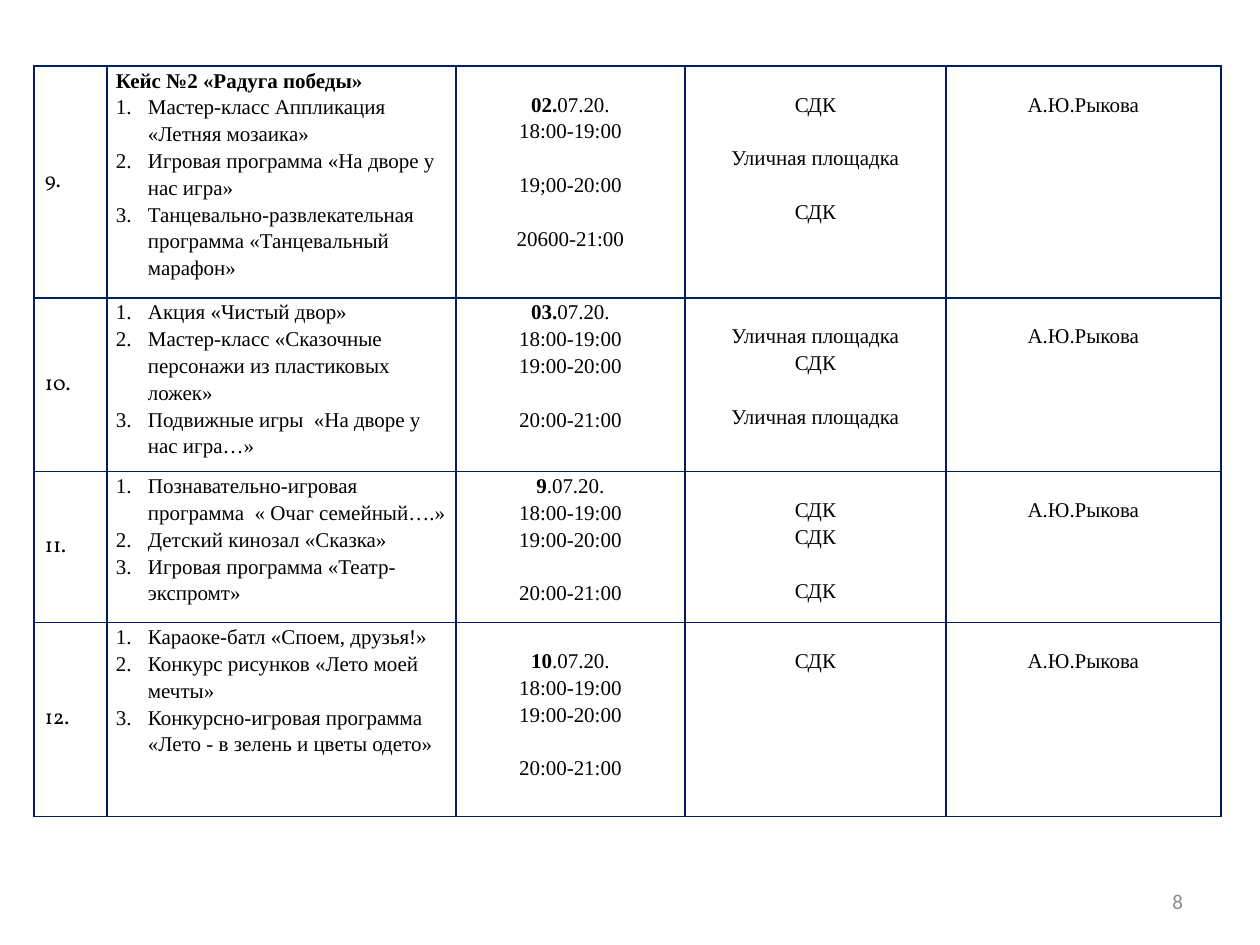
from lxml import etree
from pptx import Presentation, util as u
from pptx.dml.color import RGBColor
from pptx.enum import text
from pptx.oxml import ns

BLACK = RGBColor(0, 0, 0)
WHITE = RGBColor(0xFF, 0xFF, 0xFF)
GRAY = RGBColor(0x8C, 0x8C, 0x8C)
NAVY = RGBColor(0, 0x20, 0x60)
LEFT, CENTER, RIGHT = text.PP_ALIGN.LEFT, text.PP_ALIGN.CENTER, text.PP_ALIGN.RIGHT
MIDDLE, TOP = text.MSO_ANCHOR.MIDDLE, text.MSO_ANCHOR.TOP
GAP = None

COLUMN_WIDTHS = [73, 349, 229, 261, 275]
ROW_HEIGHTS = [227, 166, 151, 194]
LEADER = [GAP, "А.Ю.Рыкова"]
SCHEDULE = [
    ("9.", "Кейс №2 «Радуга победы»",
     ["Мастер-класс Аппликация «Летняя мозаика»",
      "Игровая программа «На дворе у нас игра»",
      "Танцевально-развлекательная программа «Танцевальный марафон»"],
     [GAP, ("02.", "07.20."), "18:00-19:00", GAP, "19;00-20:00", GAP, "20600-21:00"],
     [GAP, "СДК", GAP, "Уличная площадка", GAP, "СДК"]),
    ("10.", "",
     ["Акция «Чистый двор»",
      "Мастер-класс «Сказочные персонажи из пластиковых ложек»",
      "Подвижные игры  «На дворе у нас игра…»"],
     [("03.", "07.20."), "18:00-19:00", "19:00-20:00", GAP, "20:00-21:00"],
     [GAP, "Уличная площадка", "СДК", GAP, "Уличная площадка"]),
    ("11.", "",
     ["Познавательно-игровая программа  « Очаг семейный….»",
      "Детский кинозал «Сказка»",
      "Игровая программа «Театр-экспромт»"],
     [("9", ".07.20."), "18:00-19:00", "19:00-20:00", GAP, "20:00-21:00"],
     [GAP, "СДК", "СДК", GAP, "СДК"]),
    ("12.", "",
     ["Караоке-батл «Споем, друзья!»",
      "Конкурс рисунков «Лето моей мечты»",
      "Конкурсно-игровая программа «Лето - в зелень и цветы одето»"],
     [GAP, ("10", ".07.20."), "18:00-19:00", "19:00-20:00", GAP, "20:00-21:00"],
     [GAP, "СДК"]),
]


def px(length):
    return u.Emu(round(length * 914400 / 126))


def apply(target, **values):
    for name, value in values.items():
        setattr(target, name, value)


class SlideBuilder:
    size = u.Pt(12)
    body_font = "Times New Roman"
    number_font = "Vollkorn"
    page_font = "Calibri"
    line_spacing = 1.15
    blank_line = u.Pt(15.3)
    first_blank = 24
    indent = 32

    def __init__(self, deck):
        self.slide = deck.slides.add_slide(deck.slide_layouts[6])

    def run(self, paragraph, wording, font, color=BLACK, bold=False):
        run = paragraph.add_run()
        run.text = wording
        apply(run.font, name=font, size=self.size, bold=bold)
        run.font.color.rgb = color

    def number_list_item(self, paragraph):
        properties = paragraph._p.get_or_add_pPr()
        properties.set("marL", str(px(self.indent)))
        properties.set("indent", str(-px(self.indent)))
        etree.SubElement(properties, ns.qn("a:buFont"), typeface="+mj-lt")
        etree.SubElement(properties, ns.qn("a:buAutoNum"), type="arabicPeriod")

    def borders(self, cell):
        properties = cell._tc.get_or_add_tcPr()
        for side in ("lnL", "lnR", "lnT", "lnB"):
            line = etree.SubElement(properties, ns.qn(f"a:{side}"), w=str(u.Pt(1)))
            fill = etree.SubElement(line, ns.qn("a:solidFill"))
            etree.SubElement(fill, ns.qn("a:srgbClr"), val=str(NAVY))

    def cell(self, cell, side=9, top=0, bottom=0, anchor=TOP):
        self.borders(cell)
        cell.fill.solid()
        cell.fill.fore_color.rgb = WHITE
        apply(cell, margin_left=px(side), margin_right=px(side), margin_top=px(top),
              margin_bottom=px(bottom), vertical_anchor=anchor)
        return cell.text_frame

    def number_cell(self, cell, number):
        frame = self.cell(cell, side=11, top=6, bottom=6, anchor=MIDDLE)
        self.run(frame.paragraphs[0], number, self.number_font)

    def events_cell(self, cell, heading, events):
        frame = self.cell(cell)
        lines = [heading] * bool(heading) + events
        for index, line in enumerate(lines):
            paragraph = frame.add_paragraph() if index else frame.paragraphs[0]
            if line != heading:
                self.number_list_item(paragraph)
            apply(paragraph, alignment=LEFT, line_spacing=self.line_spacing)
            self.run(paragraph, line, self.body_font, bold=line == heading)

    def centred_cell(self, cell, lines):
        starts_blank = lines[0] is GAP
        frame = self.cell(cell, top=self.first_blank if starts_blank else 0)
        lines = lines[1:] if starts_blank else lines
        for index, line in enumerate(lines):
            if line is GAP:
                continue
            paragraph = frame.add_paragraph() if index else frame.paragraphs[0]
            apply(paragraph, alignment=CENTER, line_spacing=self.line_spacing)
            if index and lines[index - 1] is GAP:
                paragraph.space_before = self.blank_line
            bold, plain = line if isinstance(line, tuple) else ("", line)
            if bold:
                self.run(paragraph, bold, self.body_font, bold=True)
            self.run(paragraph, plain, self.body_font)

    def schedule(self, left, top):
        table = self.slide.shapes.add_table(
            len(ROW_HEIGHTS), len(COLUMN_WIDTHS), px(left), px(top),
            px(sum(COLUMN_WIDTHS)), px(sum(ROW_HEIGHTS))).table
        apply(table, first_row=False, horz_banding=False)
        for column, width in zip(table.columns, COLUMN_WIDTHS):
            column.width = px(width)
        for row, height, entry in zip(table.rows, ROW_HEIGHTS, SCHEDULE):
            row.height = px(height)
            number, heading, events, times, places = entry
            number_cell, events_cell, *centred = row.cells
            self.number_cell(number_cell, number)
            self.events_cell(events_cell, heading, events)
            for cell, lines in zip(centred, (times, places, LEADER)):
                self.centred_cell(cell, lines)

    def page_number(self, number, left, top, width, height):
        frame = self.slide.shapes.add_textbox(
            px(left), px(top), px(width), px(height)).text_frame
        apply(frame, word_wrap=True, vertical_anchor=MIDDLE,
              margin_left=px(14), margin_right=px(14),
              margin_top=px(8), margin_bottom=px(8))
        frame.paragraphs[0].alignment = RIGHT
        self.run(frame.paragraphs[0], number, self.page_font, GRAY)


def main():
    deck = Presentation()
    apply(deck, slide_width=px(1260), slide_height=px(945))
    builder = SlideBuilder(deck)
    builder.page_number("8", 903, 876, 294, 50)
    builder.schedule(34, 66)
    deck.save("out.pptx")


if __name__ == "__main__":
    main()
